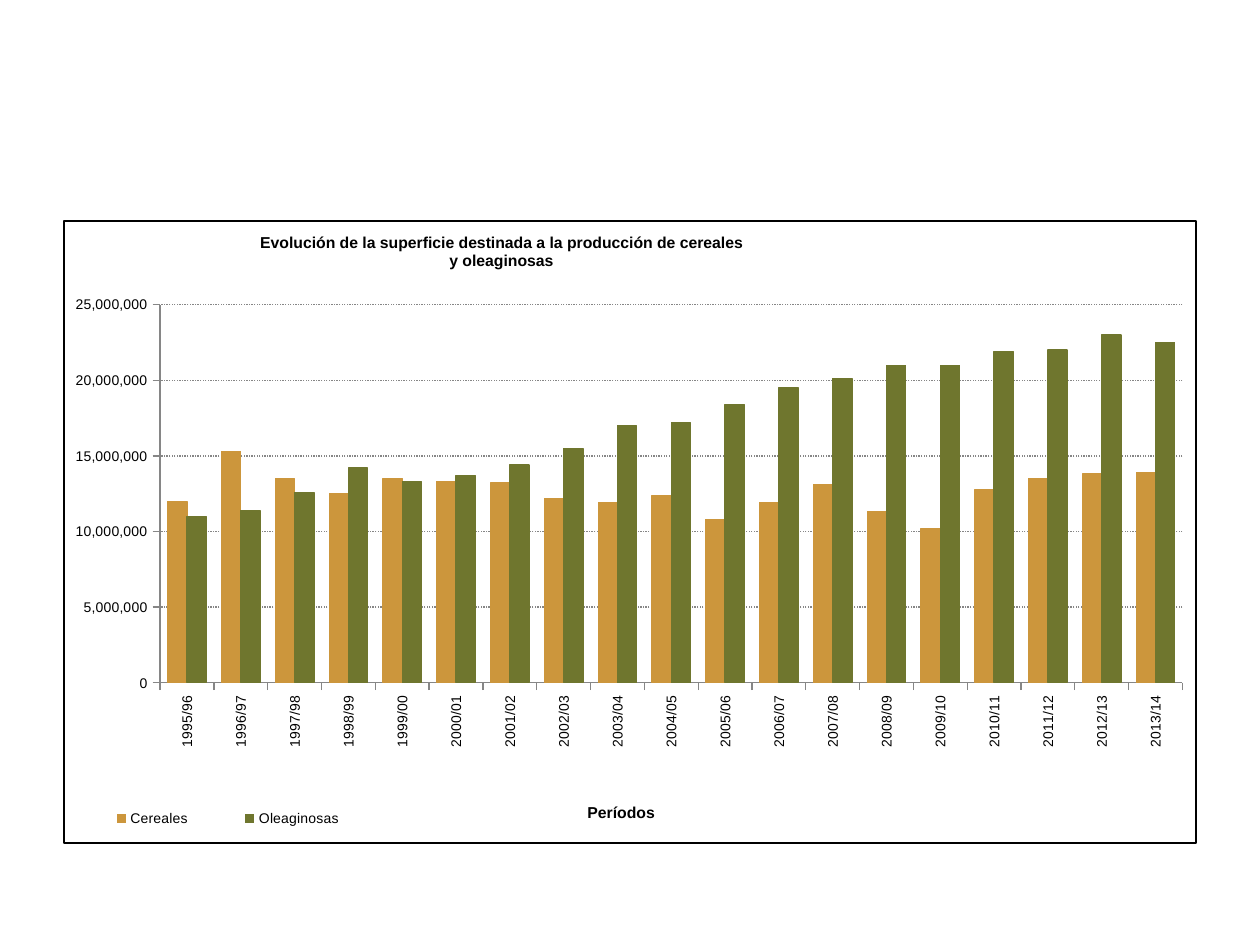
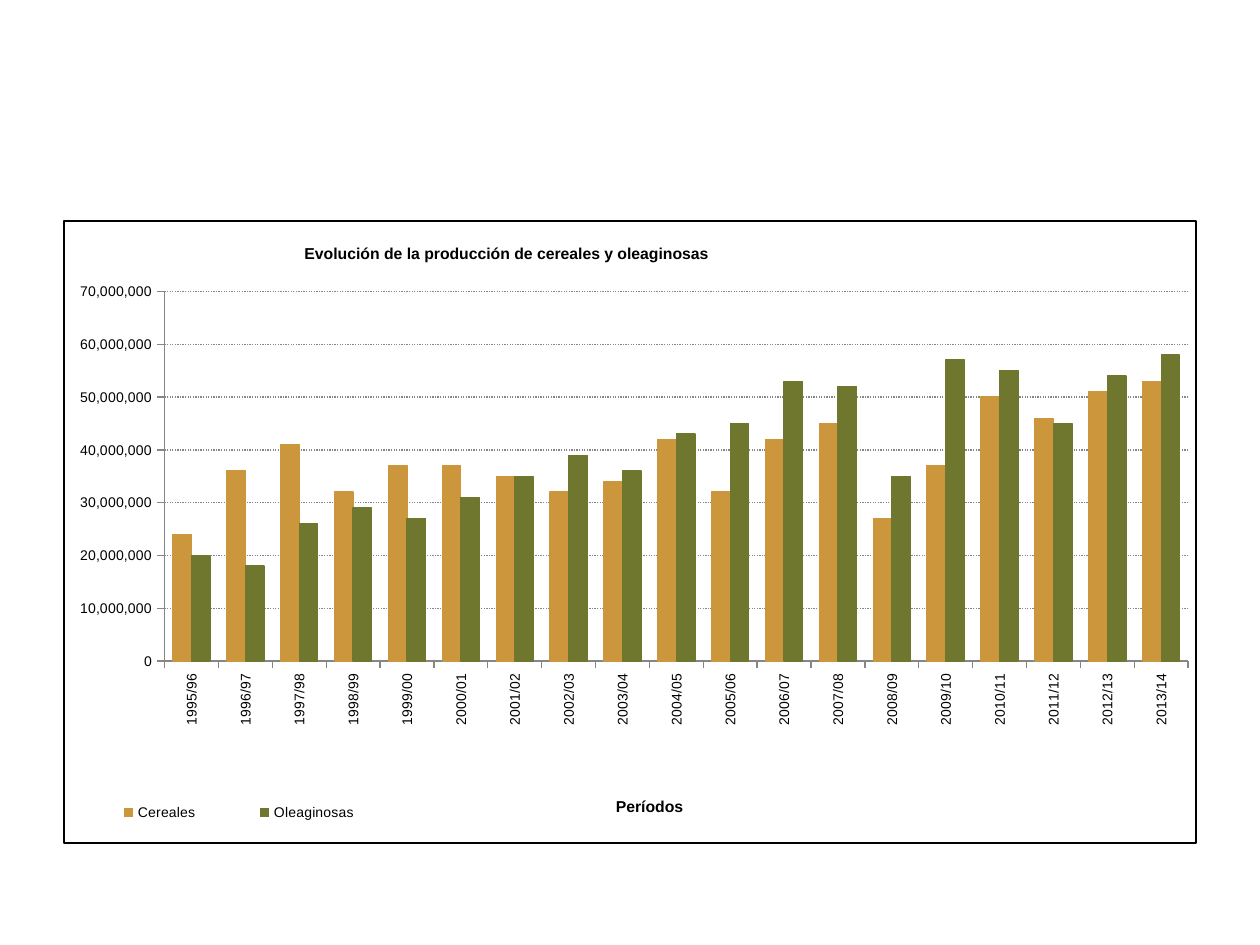
from dataclasses import dataclass
from typing import Optional

from lxml import etree
from pptx import Presentation
from pptx import util as u
from pptx.chart.data import CategoryChartData
from pptx.dml.color import RGBColor
from pptx.enum import chart as ch
from pptx.enum import dml
from pptx.oxml import parse_xml
from pptx.oxml.ns import nsdecls, qn

COLORS = {"text": "000000", "axis": "868686", "Cereales": "CC963C", "Oleaginosas": "6F762E"}
FONT = "Arial"
SLIDE_WIDTH, SLIDE_HEIGHT = u.Inches(10), u.Inches(7.5)
CHART_LEFT, CHART_TOP, CHART_WIDTH, CHART_HEIGHT = 0.05, 1.75 / 7.5, 0.9, 0.66
PERIODS = [f"{year}/{(year + 1) % 100:02d}" for year in range(1995, 2014)]
MILLION = 1_000_000


@dataclass(frozen=True)
class Area:
    x: float
    y: float
    w: Optional[float] = None
    h: Optional[float] = None


@dataclass(frozen=True)
class Evolution:
    title: str
    cereals: list[float]
    oilseeds: list[float]
    maximum: int
    step: int
    gap: int
    legend_side: ch.XL_LEGEND_POSITION
    title_area: Area
    plot_area: Area
    periods_area: Area
    legend_area: Area


EVOLUTIONS = [
    Evolution(
        title="Evolución de la superficie destinada a la producción de cereales\ny oleaginosas",
        cereals=[12, 15.3, 13.5, 12.5, 13.5, 13.3, 13.2, 12.2, 11.9, 12.4,
                 10.8, 11.9, 13.1, 11.3, 10.2, 12.8, 13.5, 13.8, 13.9],
        oilseeds=[11, 11.4, 12.6, 14.2, 13.3, 13.7, 14.4, 15.5, 17, 17.2,
                  18.4, 19.5, 20.1, 21, 21, 21.9, 22, 23, 22.5],
        maximum=25, step=5, gap=80,
        legend_side=ch.XL_LEGEND_POSITION.BOTTOM,
        title_area=Area(0.17, 0.01),
        plot_area=Area(0.085, 0.134, 0.903, 0.608),
        periods_area=Area(0.46, 0.93),
        legend_area=Area(0, 0.93, 0.29, 0.06),
    ),
    Evolution(
        title="Evolución de la producción de cereales y oleaginosas",
        cereals=[24, 36, 41, 32, 37, 37, 35, 32, 34, 42,
                 32, 42, 45, 27, 37, 50, 46, 51, 53],
        oilseeds=[20, 18, 26, 29, 27, 31, 35, 39, 36, 43,
                  45, 53, 52, 35, 57, 55, 45, 54, 58],
        maximum=70, step=10, gap=90,
        legend_side=ch.XL_LEGEND_POSITION.RIGHT,
        title_area=Area(0.21, 0.03),
        plot_area=Area(0.089, 0.113, 0.904, 0.594),
        periods_area=Area(0.485, 0.92),
        legend_area=Area(0, 0.92, 0.31, 0.06),
    ),
]


def color(name: str) -> RGBColor:
    return RGBColor.from_string(COLORS[name])


def style_font(font, size: float, bold: bool = False) -> None:
    font.name, font.size, font.bold = FONT, u.Pt(size), bold
    font.color.rgb = color("text")


def style_line(line, name: str) -> None:
    line.color.rgb = color(name)
    line.width = u.Pt(0.75)


def place(element, area: Area, after: Optional[str] = None) -> None:
    for previous in element.findall(qn("c:layout")):
        element.remove(previous)
    layout = etree.Element(qn("c:layout"))
    manual = etree.SubElement(layout, qn("c:manualLayout"))
    sized = area.w is not None
    settings = [("layoutTarget", "inner")] if element.tag == qn("c:plotArea") else []
    settings += [("xMode", "edge"), ("yMode", "edge"), ("x", area.x), ("y", area.y)]
    settings += [("w", area.w), ("h", area.h)] if sized else []
    for tag, value in settings:
        etree.SubElement(manual, qn(f"c:{tag}")).set("val", str(value))
    if after:
        element.find(qn(after)).addnext(layout)
    else:
        element.insert(0, layout)


def write_title(holder, wording: str, area: Area) -> None:
    holder.text_frame.text = wording
    for paragraph in holder.text_frame.paragraphs:
        for run in paragraph.runs:
            style_font(run.font, 9, True)
    title = holder._element
    place(title, area, "c:tx")
    title.find(qn("c:overlay")).set("val", "1")


def style_axes(chart, evolution: Evolution) -> None:
    periods, amounts = chart.category_axis, chart.value_axis
    for axis in (periods, amounts):
        style_font(axis.tick_labels.font, 8)
        style_line(axis.format.line, "axis")
        axis.major_tick_mark = ch.XL_TICK_MARK.OUTSIDE
        axis.minor_tick_mark = ch.XL_TICK_MARK.NONE
    periods._element.find(qn("c:txPr")).find(qn("a:bodyPr")).set("rot", "-5400000")
    write_title(periods.axis_title, "Períodos", evolution.periods_area)
    amounts.minimum_scale = 0
    amounts.maximum_scale = evolution.maximum * MILLION
    amounts.major_unit = evolution.step * MILLION
    amounts.tick_labels.number_format = "#,##0"
    amounts.tick_labels.number_format_is_linked = False
    amounts.has_major_gridlines = True
    grid = amounts.major_gridlines.format.line
    style_line(grid, "axis")
    grid.dash_style = dml.MSO_LINE.ROUND_DOT


def frame_chart(chart) -> None:
    border = parse_xml(
        f'<c:spPr {nsdecls("c", "a")}><a:noFill/><a:ln w="{u.Pt(1)}"><a:solidFill>'
        f'<a:srgbClr val="{COLORS["text"]}"/></a:solidFill></a:ln></c:spPr>'
    )
    chart._chartSpace.find(qn("c:chart")).addnext(border)


def draw_evolution(slide, evolution: Evolution) -> None:
    data = CategoryChartData(number_format="#,##0")
    data.categories = PERIODS
    for crop, amounts in (("Cereales", evolution.cereals), ("Oleaginosas", evolution.oilseeds)):
        data.add_series(crop, [round(amount * MILLION) for amount in amounts])
    chart = slide.shapes.add_chart(
        ch.XL_CHART_TYPE.COLUMN_CLUSTERED,
        round(SLIDE_WIDTH * CHART_LEFT), round(SLIDE_HEIGHT * CHART_TOP),
        round(SLIDE_WIDTH * CHART_WIDTH), round(SLIDE_HEIGHT * CHART_HEIGHT), data,
    ).chart
    style_font(chart.font, 8)
    frame_chart(chart)
    write_title(chart.chart_title, evolution.title, evolution.title_area)
    style_axes(chart, evolution)

    columns = chart.plots[0]
    columns.gap_width, columns.overlap = evolution.gap, 0
    columns.vary_by_categories = False
    for crop in columns.series:
        crop.format.fill.solid()
        crop.format.fill.fore_color.rgb = color(crop.name)
        style_line(crop.format.line, crop.name)
    place(chart._chartSpace.find(qn("c:chart")).find(qn("c:plotArea")), evolution.plot_area)

    chart.has_legend = True
    legend = chart.legend
    legend.position = evolution.legend_side
    legend.include_in_layout = False
    style_font(legend.font, 8)
    place(legend._element, evolution.legend_area, "c:legendPos")


def main() -> None:
    deck = Presentation()
    deck.slide_width, deck.slide_height = SLIDE_WIDTH, SLIDE_HEIGHT
    blank = deck.slide_layouts.get_by_name("Blank")
    for evolution in EVOLUTIONS:
        draw_evolution(deck.slides.add_slide(blank), evolution)
    deck.save("out.pptx")


if __name__ == "__main__":
    main()
